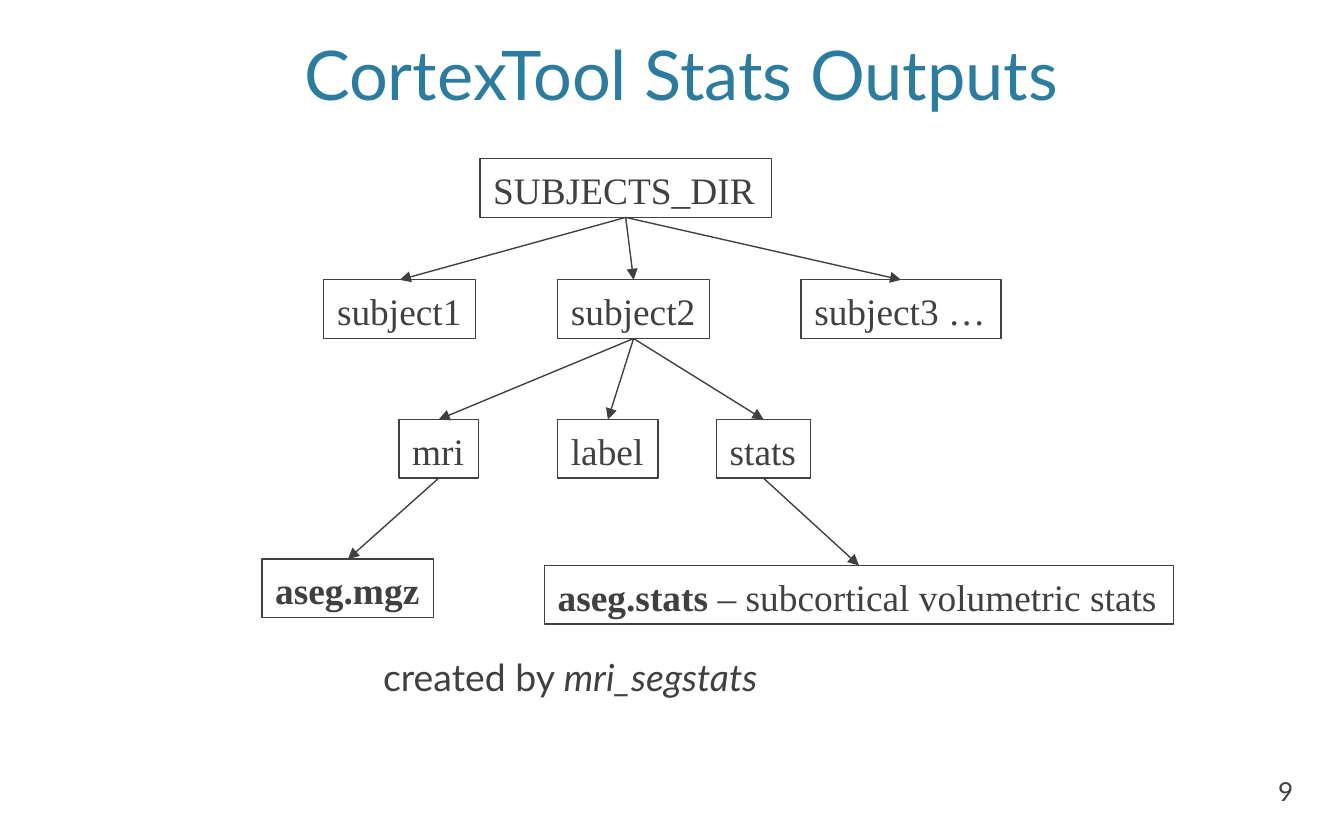
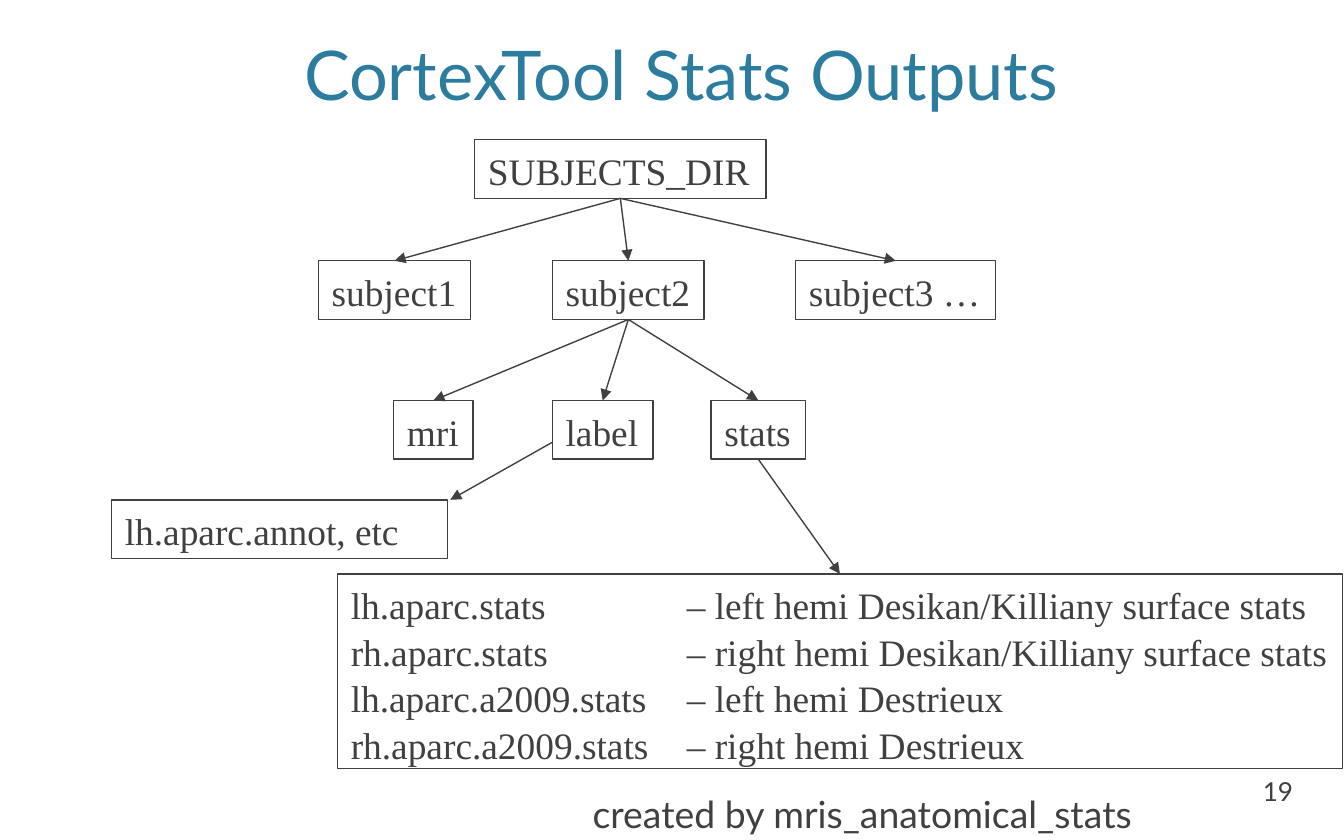
from lxml.etree import SubElement
from pptx import Presentation
from pptx.dml.color import RGBColor
from pptx.enum.shapes import MSO_CONNECTOR, MSO_SHAPE
from pptx.enum.text import MSO_ANCHOR, MSO_AUTO_SIZE, PP_ALIGN
from pptx.oxml.ns import qn
from pptx.util import Cm, Pt

TITLE_BLUE = RGBColor(0x2C, 0x7C, 0x9F)
DARK_GREY = RGBColor(0x40, 0x40, 0x40)
BODY_FONT = "Lato"
NODE_FONT = "Times New Roman"
TITLE = "CortexTool Stats Outputs"
NODE_HEIGHT = 1.11
TOP, BOTTOM = 0, 2
SUBJECTS = [("subject1", 0, 2.87), ("subject2", 4.42, 2.87), ("subject3 …", 9.02, 3.78)]
FOLDERS = [("mri", 1.5), ("label", 1.9), ("stats", 1.78)]
FOLDER_LEFT, FOLDER_STEP = 1.42, 3
SURFACE_STATS = [
    "lh.aparc.stats\t– left hemi Desikan/Killiany surface stats",
    "rh.aparc.stats\t– right hemi Desikan/Killiany surface stats",
    "lh.aparc.a2009.stats\t– left hemi Destrieux",
    "rh.aparc.a2009.stats\t– right hemi Destrieux",
]


def format_text(shape, font_name, size, color=DARK_GREY):
    """Give every run of a shape its font, size and colour."""
    for paragraph in shape.text_frame.paragraphs:
        for run in paragraph.runs:
            run.font.name = font_name
            run.font.size = Pt(size)
            run.font.color.rgb = color


def add_label(slide, box, text, size=20, color=DARK_GREY, wrap=True,
              align=PP_ALIGN.LEFT, anchor=MSO_ANCHOR.TOP):
    """Add a plain text box in the body font."""
    label = slide.shapes.add_textbox(*map(Cm, box))
    frame = label.text_frame
    frame.text = text
    frame.word_wrap = wrap
    frame.vertical_anchor = anchor
    frame.paragraphs[0].alignment = align
    format_text(label, BODY_FONT, size, color)
    return label


def add_node(slide, left, top, width, text, height=NODE_HEIGHT, wrap=False):
    """Add an outlined box that names a folder or its files."""
    node = slide.shapes.add_shape(MSO_SHAPE.RECTANGLE, *map(Cm, (left, top, width, height)))
    node.shadow.inherit = False
    node.fill.background()
    node.line.color.rgb = DARK_GREY
    node.line.width = Pt(0.75)
    frame = node.text_frame
    frame.text = text
    frame.word_wrap = wrap
    frame.auto_size = MSO_AUTO_SIZE.SHAPE_TO_FIT_TEXT
    frame.vertical_anchor = MSO_ANCHOR.TOP
    for paragraph in frame.paragraphs:
        paragraph.alignment = PP_ALIGN.LEFT
        paragraph.line_spacing = 1.04
    format_text(node, NODE_FONT, 20)
    return node


def add_arrow(slide, start=(0, 0), end=(0, 0)):
    """Add a thin straight arrow between two points."""
    arrow = slide.shapes.add_connector(MSO_CONNECTOR.STRAIGHT, *map(Cm, (*start, *end)))
    arrow.line.color.rgb = DARK_GREY
    arrow.line.width = Pt(0.75)
    SubElement(arrow.line._get_or_add_ln(), qn("a:tailEnd"), type="triangle")
    SubElement(arrow._element.spPr, qn("a:effectLst"))
    return arrow


def link(slide, parent, child):
    """Join the bottom of a parent node to the top of its child."""
    arrow = add_arrow(slide)
    arrow.begin_connect(parent, BOTTOM)
    arrow.end_connect(child, TOP)


def add_tree(slide, left, top):
    """Draw the shared folder tree and return its folder nodes by name."""
    root = add_node(slide, left + 2.95, top, 5.51, "SUBJECTS_DIR")
    subjects = [add_node(slide, left + offset, top + 2.29, width, name)
                for name, offset, width in SUBJECTS]
    folders = {name: add_node(slide, left + FOLDER_LEFT + index * FOLDER_STEP,
                              top + 4.93, width, name)
               for index, (name, width) in enumerate(FOLDERS)}
    for subject in subjects:
        link(slide, root, subject)
    for folder in folders.values():
        link(slide, subjects[1], folder)
    return folders


def add_base_slide(presentation, number):
    """Add a blank slide with the shared title and its page number."""
    slide = presentation.slides.add_slide(presentation.slide_layouts[6])
    add_label(slide, (4.06, -0.36, 17.63, 2.64), TITLE, 36.7, TITLE_BLUE,
              align=PP_ALIGN.CENTER, anchor=MSO_ANCHOR.BOTTOM)
    add_label(slide, (21.95, 14.53, 2.74, 0.84), number, 14,
              align=PP_ALIGN.RIGHT, anchor=MSO_ANCHOR.MIDDLE)
    return slide


def add_volume_slide(presentation):
    """Show where the subcortical volume files are kept."""
    slide = add_base_slide(presentation, "9")
    folders = add_tree(slide, 6.12, 3)
    volume = add_node(slide, 4.95, 10.57, 3.25, "aseg.mgz")
    stats = add_node(slide, 10.29, 10.69, 11.89, "aseg.stats")
    for node in (volume, stats):
        node.text_frame.paragraphs[0].runs[0].font.bold = True
    description = stats.text_frame.paragraphs[0].add_run()
    description.text = " – subcortical volumetric stats"
    format_text(stats, NODE_FONT, 20)
    link(slide, folders["mri"], volume)
    link(slide, folders["stats"], stats)
    caption = add_label(slide, (6.99, 12.24, 8.2, 1.75), "created by ")
    command = caption.text_frame.paragraphs[0].add_run()
    command.text = "mri_segstats"
    command.font.italic = True
    format_text(caption, BODY_FONT, 20)


def add_surface_slide(presentation):
    """Show where the cortical surface files are kept."""
    slide = add_base_slide(presentation, "19")
    folders = add_tree(slide, 6.02, 2.64)
    stats = add_node(slide, 6.38, 10.85, 18.99, "\n".join(SURFACE_STATS), 3.68, wrap=True)
    for paragraph in stats.text_frame.paragraphs:
        tabs = SubElement(paragraph._p.get_or_add_pPr(), qn("a:tabLst"))
        SubElement(tabs, qn("a:tab"), pos=str(Cm(6.35)), algn="l")
    link(slide, folders["stats"], stats)
    add_node(slide, 2.11, 9.45, 6.35, "lh.aparc.annot, etc", wrap=True)
    add_arrow(slide, (10.44, 8.36), (8.51, 9.45))
    add_label(slide, (10.95, 14.83, 11.89, 1.12), "created by mris_anatomical_stats")


def main():
    """Build the two slides and save them."""
    presentation = Presentation()
    presentation.slide_width = Cm(25.4)
    presentation.slide_height = Cm(15.88)
    add_volume_slide(presentation)
    add_surface_slide(presentation)
    presentation.save("out.pptx")


if __name__ == "__main__":
    main()
